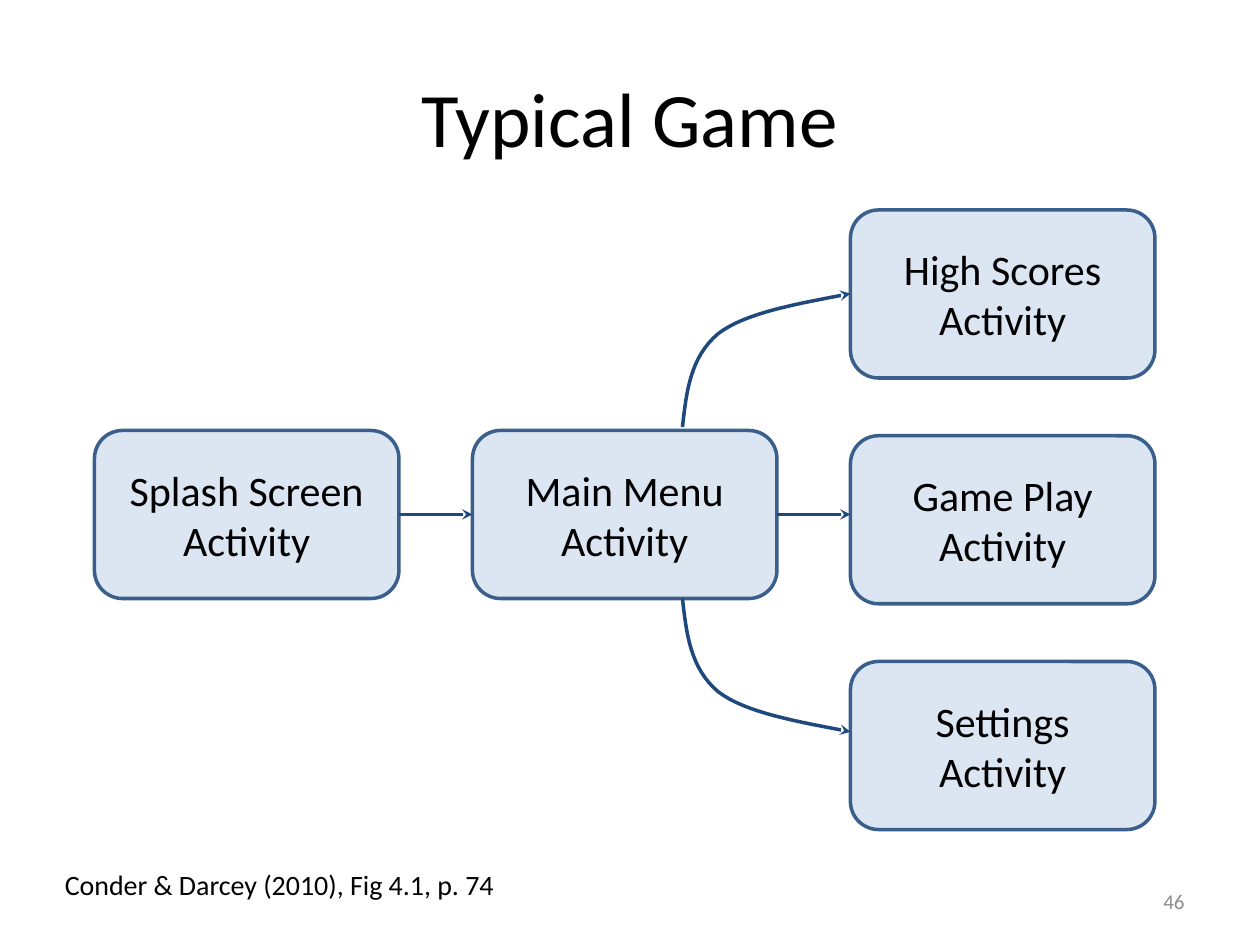
import pptx
import pptx.util
import pptx.dml.color
import pptx.enum.shapes
import pptx.enum.text
import pptx.oxml
import pptx.oxml.ns

Pt = pptx.util.Pt
ALIGN = pptx.enum.text.PP_ALIGN
ANCHOR = pptx.enum.text.MSO_ANCHOR
KIND = pptx.enum.shapes.MSO_SHAPE
WIRE = pptx.enum.shapes.MSO_CONNECTOR

COLORS = {"text": "000000", "number": "8C8C8C", "fill": "DCE6F2",
          "edge": "3A5F8C", "arrow": "1F497D"}
FONT = "Calibri"

# text, (left, top, width, height), size, color, align, anchor
LABELS = [
    ("Typical Game", (36, 21.6, 648, 90), 44, "text", ALIGN.CENTER, ANCHOR.MIDDLE),
    ("46", (516, 500.5, 168, 28.75), 12, "number", ALIGN.RIGHT, ANCHOR.MIDDLE),
    ("Conder & Darcey (2010), Fig 4.1, p. 74", (30, 492, 372, 26.6), 16, "text",
     ALIGN.LEFT, ANCHOR.TOP),
]
# name, column, top
SCREENS = [("Splash Screen", 0, 246), ("Main Menu", 1, 246), ("Game Play", 2, 249),
           ("High Scores", 2, 120), ("Settings", 2, 378)]
LEFT, STEP, WIDE, HIGH = 54, 216, 174, 96
ROW = 294  # height of the straight arrows

# Two joined Bezier pieces, as offsets from the start of a branch
BEND = [[(0, 0), (2.2, 20), (4.5, 40), (20.4, 53.3)],
        [(20.4, 53.3), (36.2, 65.5), (66.5, 70.5), (96, 76.2)]]
# start x, start y, direction down or up
BRANCHES = [(390, 244, -1), (390, 342, 1)]
PARTS = 16


def tint(name):
    return pptx.dml.color.RGBColor.from_string(COLORS[name])


def write(shape, lines, size, color, align, anchor):
    frame = shape.text_frame
    frame.word_wrap = True
    frame.vertical_anchor = anchor
    frame.text = "\n".join(lines)
    for para in frame.paragraphs:
        para.alignment = align
        para.font.name = FONT
        para.font.size = Pt(size)
        para.font.color.rgb = tint(color)


def point(shape):
    """Draw the line as an arrow with a stealth head at its end."""
    shape.line.color.rgb = tint("arrow")
    shape.line.width = Pt(2)
    pptx.oxml.ns.qn("a:ln")
    head = pptx.oxml.parse_xml(
        f'<a:tailEnd {pptx.oxml.ns.nsdecls("a")} type="stealth"/>')
    shape.line._get_or_add_ln().append(head)


def bezier(ends, t):
    weights = ((1 - t) ** 3, 3 * t * (1 - t) ** 2, 3 * t * t * (1 - t), t ** 3)
    return [sum(w * p[axis] for w, p in zip(weights, ends)) for axis in (0, 1)]


deck = pptx.Presentation()
deck.slide_width, deck.slide_height = Pt(720), Pt(540)
slide = deck.slides.add_slide(deck.slide_layouts[6])
shapes = slide.shapes

for text, place, *style in LABELS:
    write(shapes.add_textbox(*map(Pt, place)), [text], *style)

for name, col, top in SCREENS:
    place = (LEFT + col * STEP, top, WIDE, HIGH)
    box = shapes.add_shape(KIND.ROUNDED_RECTANGLE, *map(Pt, place))
    box.shadow.inherit = False
    box.fill.solid()
    box.fill.fore_color.rgb = tint("fill")
    box.line.color.rgb = tint("edge")
    box.line.width = Pt(2)
    write(box, [name, "Activity"], 24, "text", ALIGN.CENTER, ANCHOR.MIDDLE)

for col in (0, 1):
    start = LEFT + col * STEP + WIDE
    ends = (start, ROW, LEFT + (col + 1) * STEP, ROW)
    arrow = shapes.add_connector(WIRE.STRAIGHT, *map(Pt, ends))
    point(arrow)
    arrow._element.spPr.append(pptx.oxml.parse_xml(
        f'<a:effectLst {pptx.oxml.ns.nsdecls("a")}/>'))

for x, y, way in BRANCHES:
    dots = [bezier(piece, n / PARTS) for piece in BEND for n in range(1, PARTS + 1)]
    pen = shapes.build_freeform(Pt(x), Pt(y))
    pen.add_line_segments([(Pt(x + dx), Pt(y + way * dy)) for dx, dy in dots], close=False)
    curve = pen.convert_to_shape()
    curve.shadow.inherit = False
    curve.fill.background()
    point(curve)

deck.save("out.pptx")
